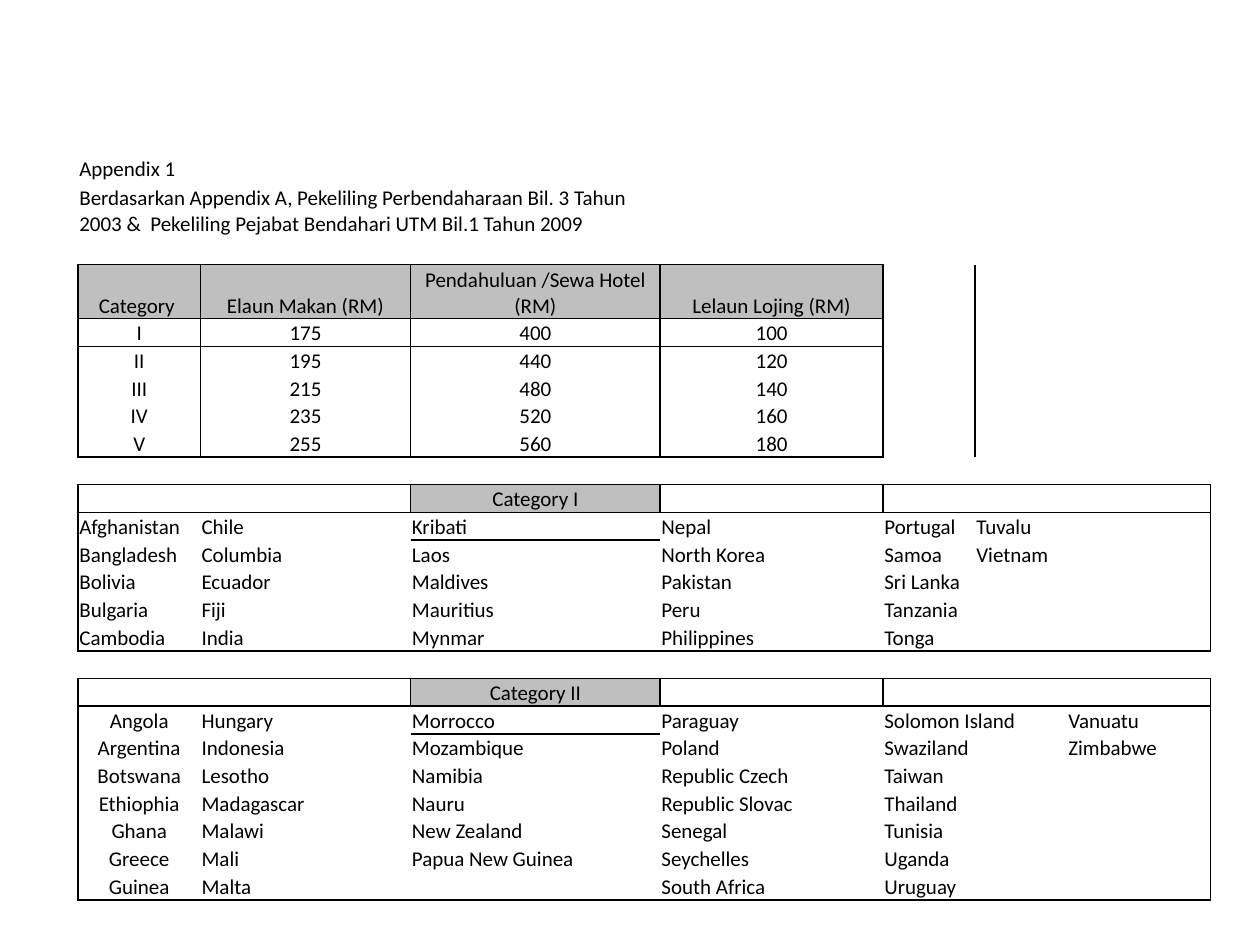
from collections import defaultdict
from itertools import product

from lxml.etree import SubElement
from pptx import Presentation
from pptx.dml.color import RGBColor
from pptx.enum.text import MSO_ANCHOR as Anchor, PP_ALIGN as Align
from pptx.oxml.ns import qn
from pptx.util import Inches, Pt

FONT = "Calibri"
SIZE = 12
BLACK = "000000"
GREY = "BFBFBF"
NO_STYLE = "{2D5ABB26-0587-4C30-8999-92F81FD0307C}"
WIDTHS = [0.97, 1.67, 1.98, 1.77, 0.73, 0.73, 1.14]
ROW_COUNT = 25
ROW_HEIGHT = 0.22
TALL_ROWS = {1: 0.43, 3: 0.43}
CELL_FORMAT = {
    "margin_left": Inches(0.01),
    "margin_right": Inches(0.01),
    "margin_top": Inches(0.01),
    "margin_bottom": Inches(0),
    "vertical_anchor": Anchor.BOTTOM,
}
APPENDIX = [
    "Appendix 1",
    "Berdasarkan Appendix A, Pekeliling Perbendaharaan Bil. 3 Tahun 2003 &  "
    "Pekeliling Pejabat Bendahari UTM Bil.1 Tahun 2009",
]
RATE_HEADINGS = ["Category ", "Elaun Makan (RM)", "Pendahuluan /Sewa Hotel (RM)", "Lelaun Lojing (RM)"]
RATES = [
    ["I", "II", "III", "IV", "V"],
    ["175", "195", "215", "235", "255"],
    ["400", "440", "480", "520", "560"],
    ["100", "120", "140", "160", "180"],
]
CATEGORY_I = [
    ["Afghanistan", "Bangladesh", "Bolivia", "Bulgaria", "Cambodia"],
    ["Chile", "Columbia", "Ecuador", "Fiji", "India"],
    ["Kribati", "Laos", "Maldives", "Mauritius", "Mynmar"],
    ["Nepal", "North Korea", "Pakistan", "Peru", "Philippines"],
    ["Portugal", "Samoa", "Sri Lanka", "Tanzania", "Tonga"],
    ["Tuvalu", "Vietnam"],
]
CATEGORY_II = [
    ["Angola", "Argentina", "Botswana", "Ethiophia", "Ghana", "Greece", "Guinea"],
    ["Hungary", "Indonesia", "Lesotho", "Madagascar", "Malawi", "Mali", "Malta"],
    ["Morrocco", "Mozambique", "Namibia", "Nauru", "New Zealand", "Papua New Guinea"],
    ["Paraguay", "Poland", "Republic Czech", "Republic Slovac", "Senegal", "Seychelles", "South Africa"],
    ["Solomon Island", "Swaziland", "Taiwan", "Thailand", "Tunisia", "Uganda", "Uruguay"],
    [],
    ["Vanuatu", "Zimbabwe"],
]


def color(value):
    """Turn a hex string into a colour."""
    return RGBColor.from_string(value)


def add_plain_table(slide):
    """Add the unstyled grid that holds the whole appendix."""
    heights = [TALL_ROWS.get(row, ROW_HEIGHT) for row in range(ROW_COUNT)]
    frame = slide.shapes.add_table(
        ROW_COUNT, len(WIDTHS), Inches(0.62), Inches(1.23), Inches(sum(WIDTHS)), Inches(sum(heights))
    )
    table = frame.table
    table.first_row = table.horz_banding = False
    next(frame.element.iter(qn("a:tableStyleId"))).text = NO_STYLE
    for column, width in zip(table.columns, WIDTHS):
        column.width = Inches(width)
    for row, height in zip(table.rows, heights):
        row.height = Inches(height)
    for cell in table.iter_cells():
        format_cell(cell)
    return table


def format_cell(cell):
    """Give a cell its margins, anchor and an empty line of the text size."""
    for name, value in CELL_FORMAT.items():
        setattr(cell, name, value)
    cell.fill.background()
    paragraph = cell.text_frame.paragraphs[0]
    SubElement(paragraph._p, qn("a:endParaRPr"), sz=str(SIZE * 100))


def write(cell, text, align=Align.LEFT):
    """Write one line of text in a cell."""
    paragraph = cell.text_frame.paragraphs[0]
    paragraph.alignment = align
    run = paragraph.add_run()
    run.text = text
    for name, value in {"name": FONT, "size": Pt(SIZE)}.items():
        setattr(run.font, name, value)
    run.font.color.rgb = color(BLACK)


def write_heading(table, edges, row, column, text):
    """Write a grey, boxed, centred heading."""
    cell = table.cell(row, column)
    write(cell, text, Align.CENTER)
    cell.fill.solid()
    cell.fill.fore_color.rgb = color(GREY)
    outline(edges, row, column, row, column)


def write_columns(table, top, columns, centred):
    """Write lists of text downwards, centring the given columns."""
    for column, texts in enumerate(columns):
        align = Align.CENTER if column in centred else Align.LEFT
        for row, text in enumerate(texts, top):
            write(table.cell(row, column), text, align)


def outline(edges, top, left, bottom, right):
    """Record a box around a range, on both sides of each edge."""
    for column in range(left, right + 1):
        edges[top, column].add("T")
        edges[top - 1, column].add("B")
        edges[bottom, column].add("B")
        edges[bottom + 1, column].add("T")
    for row in range(top, bottom + 1):
        edges[row, left].add("L")
        edges[row, left - 1].add("R")
        edges[row, right].add("R")
        edges[row, right + 1].add("L")


def draw_edges(table, edges):
    """Draw the recorded borders of every cell."""
    for row, column in product(range(ROW_COUNT), range(len(WIDTHS))):
        properties = table.cell(row, column)._tc.get_or_add_tcPr()
        sides = [side for side in "LRTB" if side in edges[row, column]]
        for position, side in enumerate(sides):
            line = SubElement(properties, qn(f"a:ln{side}"), w=str(Pt(1)))
            fill = SubElement(line, qn("a:solidFill"))
            SubElement(fill, qn("a:srgbClr"), val=BLACK)
            properties.insert(position, line)


def add_rates(table, edges, top):
    """Fill the allowance rates, one boxed column for each kind."""
    for column, (heading, values) in enumerate(zip(RATE_HEADINGS, RATES)):
        write_heading(table, edges, top, column, heading)
        outline(edges, top + 1, column, top + len(values), column)
    write_columns(table, top + 1, RATES, range(len(RATES)))


def add_category(table, edges, top, title, countries, centred=()):
    """Fill a boxed category of countries under its heading."""
    outline(edges, top, 0, top + len(countries[0]), len(WIDTHS) - 1)
    write_heading(table, edges, top, 2, title)
    write_columns(table, top + 1, countries, centred)


def main():
    """Build the slide and save it."""
    presentation = Presentation()
    presentation.slide_width = Inches(10)
    presentation.slide_height = Inches(7.5)
    slide = presentation.slides.add_slide(presentation.slide_layouts[6])
    table = add_plain_table(slide)
    edges = defaultdict(set)
    for row, left, right in [(1, 0, 2), (18, 4, 5), (19, 4, 5)]:
        table.cell(row, left).merge(table.cell(row, right))
    write_columns(table, 0, [APPENDIX], ())
    add_rates(table, edges, 3)
    add_category(table, edges, 10, "Category I", CATEGORY_I)
    add_category(table, edges, 17, "Category II", CATEGORY_II, centred=(0,))
    draw_edges(table, edges)
    presentation.save("out.pptx")


if __name__ == "__main__":
    main()
